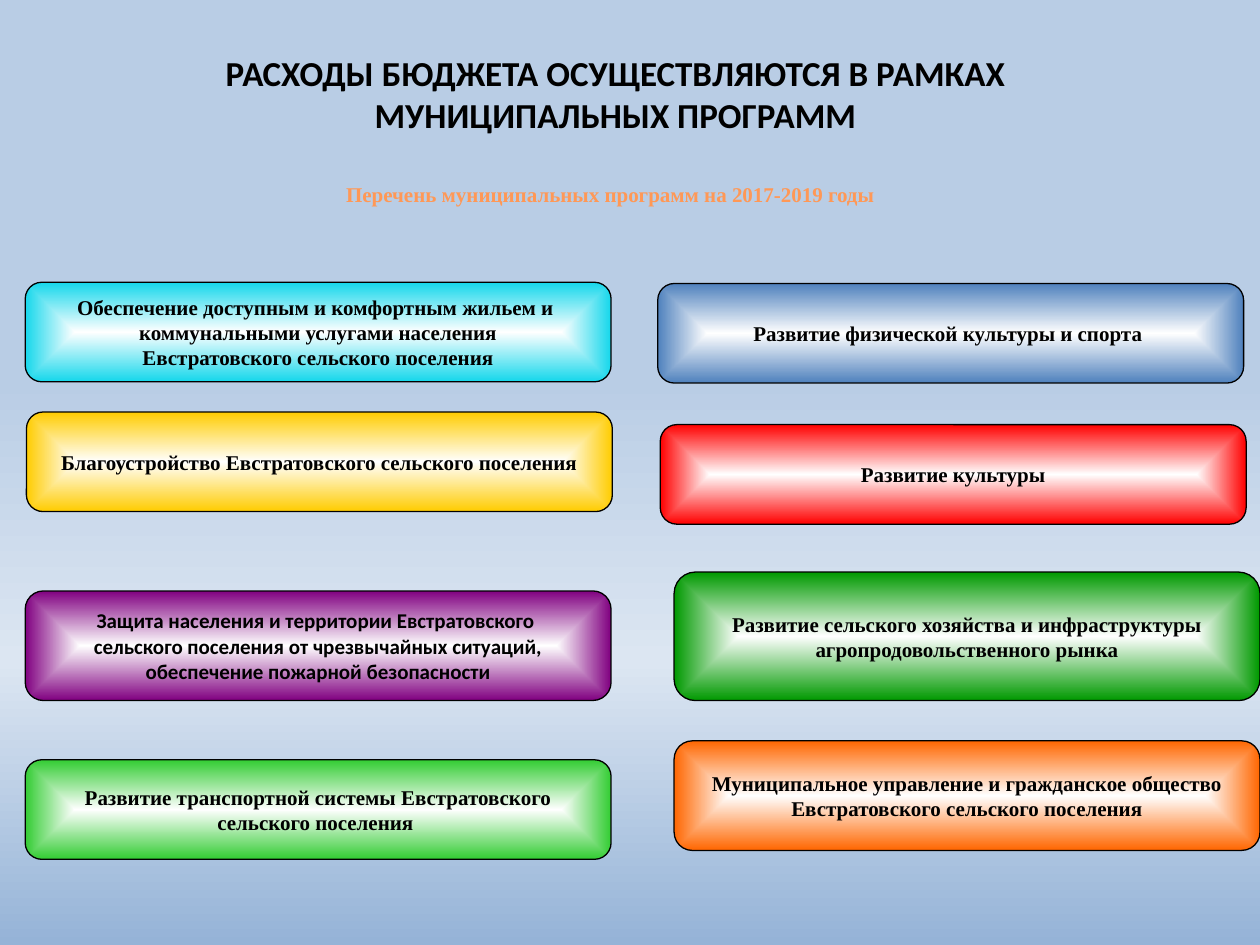
from lxml import etree
from pptx import Presentation
from pptx.dml.color import RGBColor
from pptx.enum.shapes import MSO_SHAPE
from pptx.enum.text import MSO_ANCHOR, MSO_AUTO_SIZE, PP_ALIGN
from pptx.oxml.ns import qn
from pptx.util import Inches, Pt

WIDTH, HEIGHT = Inches(10), Inches(7.5)
COLUMN, ROW = WIDTH / 10, HEIGHT / 7.5
CARD_COLUMNS = 4.65

COLORS = {
    "black": "000000", "white": "FFFFFF",
    "sky": "B9CDE5", "mist": "DCE6F2", "dusk": "95B3D7",
    "brown": "9D4700", "peach": "FF9856", "cream": "FFF5F1",
    "cyan": "15D7EB", "blue": "4F81BD", "yellow": "FFCC00", "red": "FF0000",
    "purple": "800080", "green": "009900", "lime": "33CC33", "orange": "FF6600",
}
SERIF, SANS = "Times New Roman", "Calibri"

# Each program: column, row, rows high, color, font, wraps, paragraphs
PROGRAMS = [
    (0.2, 2.24, 0.79, "cyan", SERIF, False,
     ["Обеспечение доступным и комфортным жильем и ",
      "коммунальными услугами населения",
      "Евстратовского сельского поселения"]),
    (0.21, 3.27, 0.79, "yellow", SERIF, False,
     ["Благоустройство Евстратовского сельского поселения"]),
    (0.2, 4.69, 0.87, "purple", SANS, True,
     ["Защита населения и территории Евстратовского ",
      "сельского поселения от чрезвычайных ситуаций,",
      "обеспечение пожарной безопасности"]),
    (0.2, 6.03, 0.79, "lime", SERIF, True,
     ["Развитие транспортной системы Евстратовского сельского поселения "]),
    (5.22, 2.25, 0.79, "blue", SERIF, True,
     ["Развитие физической культуры и спорта "]),
    (5.24, 3.37, 0.79, "red", SERIF, True, ["Развитие культуры"]),
    (5.35, 4.54, 1.02, "green", SERIF, True,
     ["Развитие сельского хозяйства и инфраструктуры "
      "агропродовольственного рынка"]),
    (5.35, 5.88, 0.87, "orange", SERIF, True,
     ["Муниципальное управление и гражданское общество "
      "Евстратовского сельского поселения"]),
]


def set_format(target, values):
    for name, value in values.items():
        setattr(target, name, value)


def grid_box(column, row, columns, rows):
    return [round(n) for n in
            (column * COLUMN, row * ROW, columns * COLUMN, rows * ROW)]


def set_gradient(fill, owner, stops, from_center=False):
    """Replace the solid fill of owner with a gradient of (percent, color) stops."""
    fill.solid()
    gradient = etree.Element(qn("a:gradFill"), rotWithShape="1")
    stop_list = etree.SubElement(gradient, qn("a:gsLst"))
    for percent, color in stops:
        stop = etree.SubElement(stop_list, qn("a:gs"), pos=str(percent * 1000))
        etree.SubElement(stop, qn("a:srgbClr"), val=COLORS[color])
    if from_center:
        center = etree.SubElement(gradient, qn("a:path"), path="shape")
        etree.SubElement(center, qn("a:fillToRect"),
                         dict.fromkeys("ltrb", "50000"))
    else:
        etree.SubElement(gradient, qn("a:lin"), ang="5400000", scaled="0")
    owner.replace(owner.find(qn("a:solidFill")), gradient)


def write_text(frame, lines, font, size=12, **frame_format):
    set_format(frame, frame_format)
    for index, line in enumerate(lines):
        paragraph = frame.add_paragraph() if index else frame.paragraphs[0]
        paragraph.alignment = PP_ALIGN.CENTER
        run = paragraph.add_run()
        run.text = line
        set_format(run.font, {"name": font, "size": Pt(size), "bold": True})
        run.font.color.rgb = RGBColor.from_string(COLORS["black"])


def add_background(slide):
    background = slide.background
    background.fill.solid()
    set_gradient(background.fill, background._cSld.bg.bgPr,
                 [(0, "sky"), (40, "sky"), (70, "mist"), (100, "dusk")])


def add_title(slide, box):
    title = slide.shapes.title
    set_format(title, dict(zip(("left", "top", "width", "height"), box)))
    write_text(title.text_frame,
               ["РАСХОДЫ БЮДЖЕТА ОСУЩЕСТВЛЯЮТСЯ В РАМКАХ МУНИЦИПАЛЬНЫХ ПРОГРАММ"],
               SANS, 20, word_wrap=True, vertical_anchor=MSO_ANCHOR.TOP,
               auto_size=MSO_AUTO_SIZE.SHAPE_TO_FIT_TEXT)


def add_subtitle(slide, box):
    frame = slide.shapes.add_textbox(*box).text_frame
    write_text(frame, ["Перечень муниципальных программ на 2017-2019 годы"],
               SERIF, word_wrap=False)
    run = frame.paragraphs[0].runs[0]
    set_gradient(run.font.fill, run._r.get_or_add_rPr(),
                 [(0, "brown"), (78, "peach"), (100, "cream")])


def add_program(slide, box, color, font, wraps, lines):
    card = slide.shapes.add_shape(MSO_SHAPE.ROUNDED_RECTANGLE, *box)
    card.shadow.inherit = False
    set_gradient(card.fill, card._element.spPr,
                 [(0, "white"), (100, color)], from_center=True)
    card.line.color.rgb = RGBColor.from_string(COLORS["black"])
    card.line.width = Pt(0.75)
    write_text(card.text_frame, lines, font, word_wrap=wraps,
               vertical_anchor=MSO_ANCHOR.MIDDLE)


def main():
    deck = Presentation()
    set_format(deck, {"slide_width": WIDTH, "slide_height": HEIGHT})
    slide = deck.slides.add_slide(deck.slide_layouts.get_by_name("Title Only"))
    add_background(slide)
    add_title(slide, grid_box(0.59, 0.36, 8.59, 0.77))
    add_subtitle(slide, grid_box(0.79, 1.39, 8.11, 0.47))
    for column, row, rows, *content in PROGRAMS:
        add_program(slide, grid_box(column, row, CARD_COLUMNS, rows), *content)
    deck.save("out.pptx")


if __name__ == "__main__":
    main()
